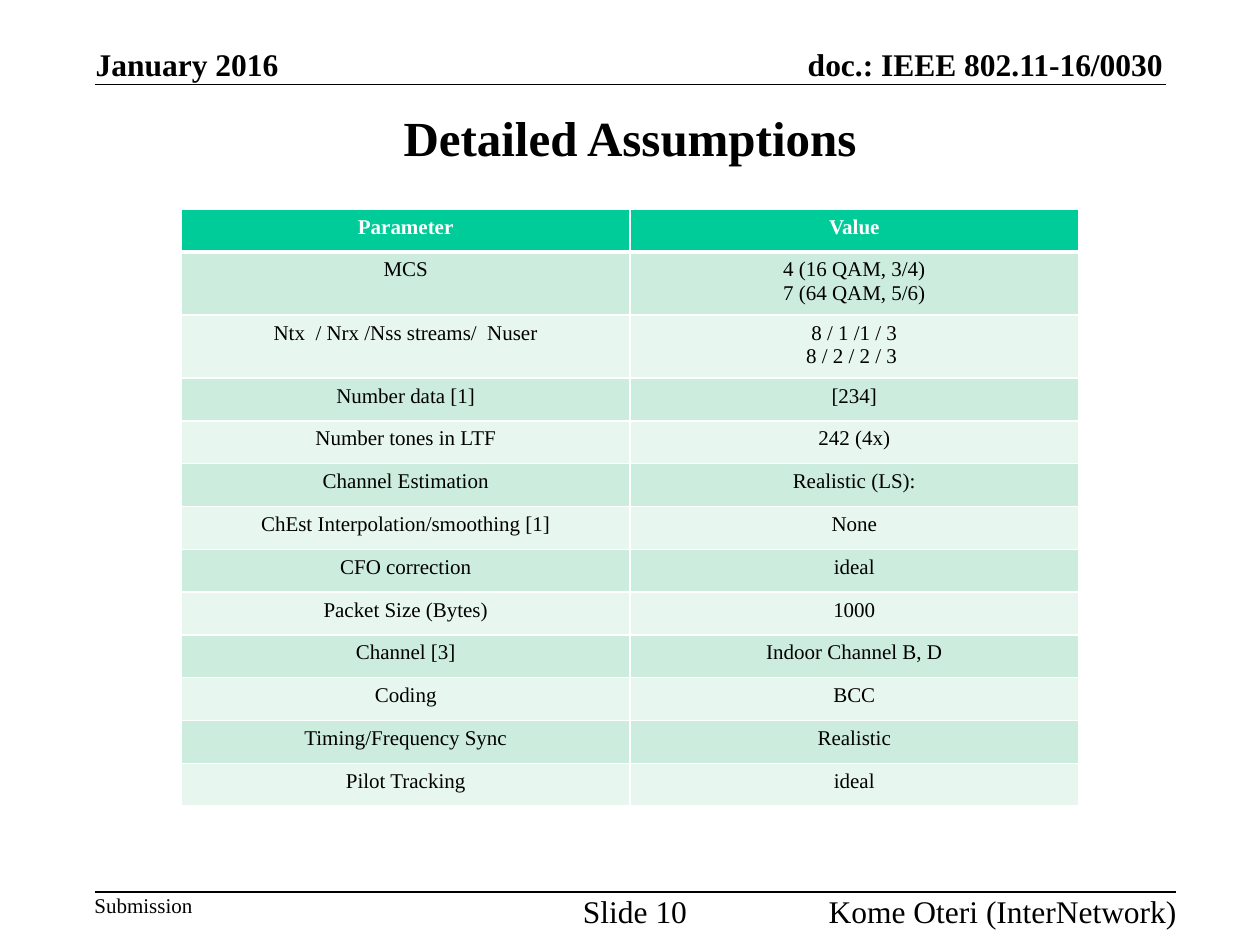
from lxml import etree
from pptx import Presentation
from pptx.dml.color import RGBColor
from pptx.enum.shapes import MSO_CONNECTOR
from pptx.enum.text import MSO_ANCHOR as Anchor, PP_ALIGN as Align
from pptx.oxml import parse_xml
from pptx.oxml.ns import nsdecls, qn
from pptx.util import Inches, Pt


def color(hex_value):
    return RGBColor.from_string(hex_value)


def add_text(paragraph, text, size, bold=False, hex_value="000000", align=Align.CENTER):
    paragraph.alignment = align
    run = paragraph.add_run()
    run.text = text
    run.font.name = "Times New Roman"
    run.font.size = Pt(size)
    run.font.bold = bold
    run.font.color.rgb = color(hex_value)


presentation = Presentation()
presentation.slide_width = Inches(10)
presentation.slide_height = Inches(7.5)
slide = presentation.slides.add_slide(presentation.slide_layouts[5])

for y, right in [(0.67, 9.25), (7.08, 9.33)]:
    rule = slide.shapes.add_connector(
        MSO_CONNECTOR.STRAIGHT, Inches(0.75), Inches(y), Inches(right), Inches(y))
    rule.line.color.rgb = color("000000")
    rule.line.width = Pt(1)
    etree.SubElement(rule._element.spPr, qn("a:effectLst"))

title = slide.shapes.title
title.left, title.top = Inches(0.75), Inches(0.75)
title.width, title.height = Inches(8.5), Inches(0.67)
title.text_frame.vertical_anchor = Anchor.MIDDLE
add_text(title.text_frame.paragraphs[0], "Detailed Assumptions", 28, True)

header_footer = [
    ("January 2016", 0.76, 0.36, 1.47, 0.3, 18, True, Align.LEFT, Anchor.BOTTOM),
    ("doc.: IEEE 802.11-16/0030", 5.88, 0.36, 3.35, 0.3, 18, True, Align.RIGHT, Anchor.BOTTOM),
    ("Submission", 0.75, 7.08, 0.8, 0.2, 12, False, Align.LEFT, Anchor.TOP),
    ("Slide 10", 4.54, 7.08, 1, 0.3, 18, False, Align.CENTER, Anchor.TOP),
    ("Kome Oteri (InterNetwork)", 6.34, 7.08, 3, 0.3, 18, False, Align.RIGHT, Anchor.TOP),
]
for text, left, top, width, height, size, bold, align, anchor in header_footer:
    box = slide.shapes.add_textbox(Inches(left), Inches(top), Inches(width), Inches(height))
    frame = box.text_frame
    frame.word_wrap = True
    frame.vertical_anchor = anchor
    frame.margin_left = frame.margin_right = frame.margin_top = frame.margin_bottom = 0
    add_text(frame.paragraphs[0], text, size, bold, align=align)

assumptions = [
    ("Parameter", ["Value"]),
    ("MCS", ["4 (16 QAM, 3/4)", "7 (64 QAM, 5/6)"]),
    ("Ntx  / Nrx /Nss streams/  Nuser", ["8 / 1 /1 / 3", "8 / 2 / 2 / 3 "]),
    ("Number data [1]", ["[234]"]),
    ("Number tones in LTF", ["242 (4x)"]),
    ("Channel Estimation", ["Realistic (LS):"]),
    ("ChEst Interpolation/smoothing [1]", ["None"]),
    ("CFO correction", ["ideal"]),
    ("Packet Size (Bytes)", ["1000"]),
    ("Channel [3]", ["Indoor Channel B, D"]),
    ("Coding", ["BCC"]),
    ("Timing/Frequency Sync", ["Realistic"]),
    ("Pilot Tracking", ["ideal"]),
]
table = slide.shapes.add_table(
    len(assumptions), 2, Inches(1.44), Inches(1.66), Inches(7.12), Inches(4.66)).table
for row_index, (parameter, values) in enumerate(assumptions):
    is_header = row_index == 0
    table.rows[row_index].height = Inches(0.46 if len(values) > 1 else 0.34)
    band = "00CC99" if is_header else "CCECDE" if row_index % 2 else "E7F6EF"
    for column_index, lines in enumerate([[parameter], values]):
        cell = table.cell(row_index, column_index)
        for side in ("lnL", "lnR", "lnT", "lnB"):
            thick = (is_header and side == "lnB") or (row_index == 1 and side == "lnT")
            cell._tc.get_or_add_tcPr().append(parse_xml(
                f'<a:{side} {nsdecls("a")} w="{Pt(3 if thick else 1)}"><a:solidFill>'
                f'<a:srgbClr val="FFFFFF"/></a:solidFill></a:{side}>'))
        cell.fill.solid()
        cell.fill.fore_color.rgb = color(band)
        frame = cell.text_frame
        for line_index, line in enumerate(lines):
            paragraph = frame.add_paragraph() if line_index else frame.paragraphs[0]
            add_text(paragraph, line, 12, is_header, "FFFFFF" if is_header else "000000")

presentation.save("out.pptx")
